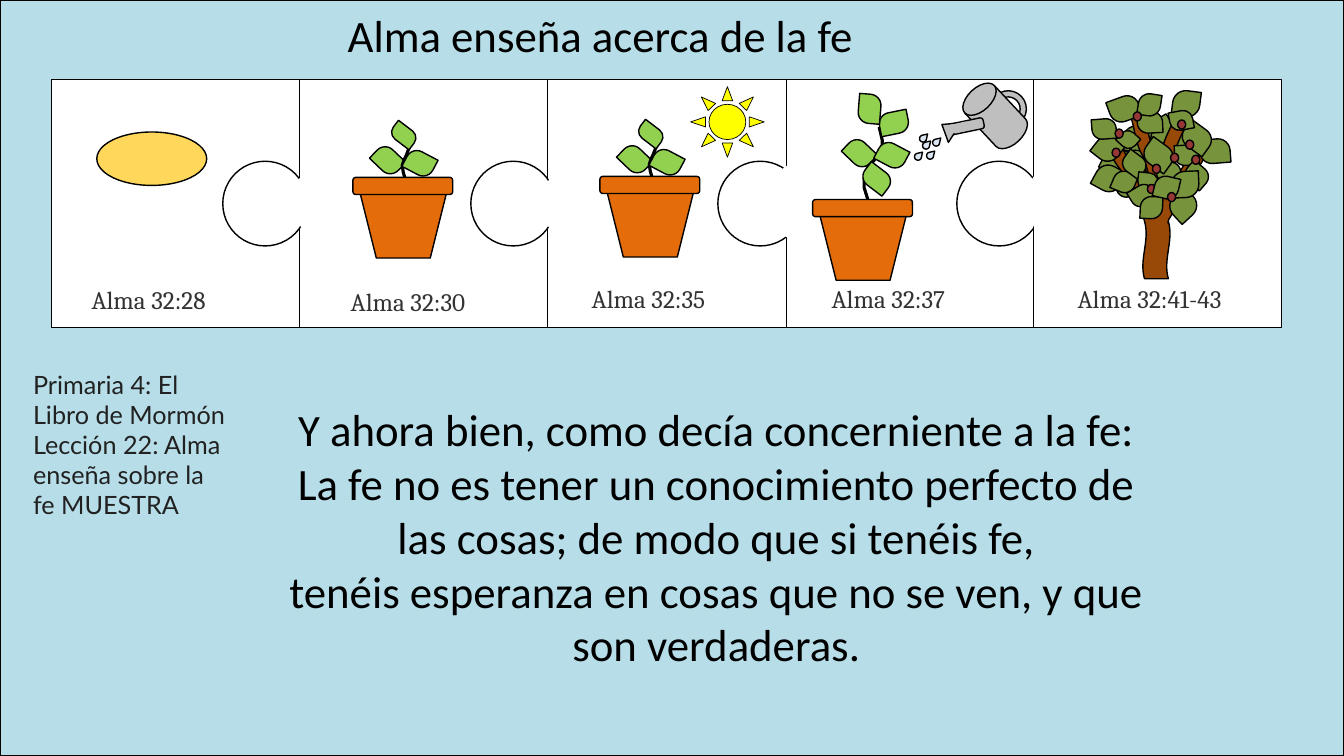
from pptx import Presentation
from pptx.dml.color import RGBColor
from pptx.enum.shapes import MSO_SHAPE
from pptx.enum.text import PP_ALIGN
from pptx.util import Inches, Pt

SKY = RGBColor(0xB7, 0xDE, 0xE8)
WHITE = RGBColor(0xFF, 0xFF, 0xFF)
BLACK = RGBColor(0, 0, 0)
SEED = RGBColor(0xFF, 0xD8, 0x5B)
LEAF = RGBColor(0x92, 0xD0, 0x50)
POT = RGBColor(0xE4, 0x6C, 0x0A)
SUN = RGBColor(0xFF, 0xFF, 0)
METAL = RGBColor(0xBF, 0xBF, 0xBF)
WATER = RGBColor(0xDC, 0xE6, 0xF2)
FOLIAGE = RGBColor(0x77, 0x93, 0x3C)
BARK = RGBColor(0x98, 0x48, 0x07)
FRUIT = RGBColor(0x95, 0x37, 0x35)
GRAY = RGBColor(0x33, 0x33, 0x33)
DARK = RGBColor(0x21, 0x21, 0x21)
NBSP = chr(160)

SIDE, KNOB, PUZZLE_TOP = 2.46, 0.84, 0.79

SPROUT_LEAVES = [(0.16, -0.31, 0.29, 0.22, 43.7), (0.48, -0.28, 0.29, 0.22, 27.8),
                 (0.38, -0.58, 0.17, 0.26, 307.3)]
SPROUT_STEM = [(0.49, 0.1), (0.5, 0.07), (0.49, 0.02), (0.46, -0.08), (0.45, -0.15),
               (0.47, -0.21), (0.49, -0.25), (0.52, -0.33), (0.52, -0.4), (0.5, -0.45)]
TALL_LEAVES = [(0.28, -0.6, 0.29, 0.22, 43.7), (0.6, -0.58, 0.29, 0.22, 27.8),
               (0.49, -0.38, 0.21, 0.29, 307.3), (0.62, -0.9, 0.29, 0.22, 348.6),
               (0.38, -1.04, 0.29, 0.22, 274.6)]
TALL_STEM = [(0.5, 0.14), (0.52, 0.08), (0.52, 0.01), (0.47, -0.15), (0.47, -0.24),
             (0.51, -0.36), (0.57, -0.42), (0.65, -0.56), (0.65, -0.62), (0.62, -0.75)]

BACK_FOLIAGE = [
    (11.58, 1.31, 0.24, 0.3, 85.5), (11.38, 1.18, 0.27, 0.26, 329.9),
    (11.14, 1.25, 0.27, 0.26, 10.4), (11.15, 1.49, 0.22, 0.22, 15.3),
    (10.94, 1.47, 0.27, 0.26, 26.4), (10.86, 1.64, 0.27, 0.26, 28.9),
    (11.09, 1.73, 0.2, 0.24, 71.7)]
BRANCHES = [
    (10.9, 2.06, 1.14, 0.27, 270), (10.72, 1.6, 0.95, 0.15, 235.5),
    (11.24, 1.76, 0.95, 0.15, 298.7), (11.11, 1.45, 0.95, 0.15, 289.4),
    (10.91, 1.43, 0.95, 0.15, 252.4)]
MIDDLE_FOLIAGE = [
    (10.86, 1.35, 0.25, 0.25, 38.2), (11.63, 0.9, 0.27, 0.26, 187.3),
    (11.03, 0.93, 0.24, 0.3, 69.8), (11.1, 1.3, 0.18, 0.17, 42.2),
    (10.85, 1.16, 0.2, 0.24, 85.5), (11.3, 1.09, 0.21, 0.25, 87.1),
    (11.04, 1.7, 0.22, 0.21, 22.8), (11.15, 1.51, 0.2, 0.24, 126.4),
    (11.49, 1.59, 0.2, 0.24, 87.1), (11.37, 1.39, 0.24, 0.3, 126),
    (11.29, 0.93, 0.22, 0.22, 8.9), (11.67, 1.42, 0.2, 0.24, 87.1),
    (11.93, 1.35, 0.24, 0.3, 85.5), (11.75, 1.22, 0.24, 0.3, 126),
    (11.62, 1.08, 0.19, 0.23, 79.4), (11.77, 1.62, 0.2, 0.24, 130.9)]
UPPER_FRUIT = [(11.03, 1.47), (11.82, 1.54), (11.76, 1.39), (11.06, 1.28),
               (11.24, 1.11), (11.68, 1.19), (11.43, 1.63), (11.61, 1.52)]
LOW_FOLIAGE = [(11.3, 1.7, 0.17, 0.2, 276.1), (11.23, 1.82, 0.2, 0.24, 238.6)]
FRONT_FOLIAGE = [
    (11.6, 1.91, 0.27, 0.26, 137.2), (11.62, 1.7, 0.27, 0.26, 177.7),
    (11.31, 1.95, 0.22, 0.22, 182.6), (11.45, 1.75, 0.24, 0.22, 193.2)]
DROPS = [(9.15, 1.41), (9.25, 1.38), (9.12, 1.34), (9.07, 1.52), (9.19, 1.51)]


def add_shape(shapes, kind, x, y, w, h, fill, rot=0, line=BLACK, width=1, adj=()):
    sp = shapes.add_shape(kind, Inches(x), Inches(y), Inches(w), Inches(h))
    sp.shadow.inherit = False
    sp.rotation = rot
    sp.fill.solid()
    sp.fill.fore_color.rgb = fill
    if line is None:
        sp.line.fill.background()
    else:
        sp.line.color.rgb = line
        sp.line.width = Pt(width)
    for i, value in enumerate(adj):
        sp.adjustments[i] = value
    return sp


def add_text(s, text, x, y, w, h, size, font, color, align=PP_ALIGN.LEFT):
    tf = s.shapes.add_textbox(Inches(x), Inches(y), Inches(w), Inches(h)).text_frame
    tf.word_wrap = True
    p = tf.paragraphs[0]
    p.text = text
    p.alignment = align
    p.font.size = Pt(size)
    p.font.name = font
    p.font.color.rgb = color


def add_leaves(shapes, leaves, color, dx=0, dy=0):
    for x, y, w, h, rot in leaves:
        add_shape(shapes, MSO_SHAPE.ROUND_2_DIAG_RECTANGLE, x + dx, y + dy, w, h,
                  color, rot, adj=(0.5, 0))


def add_stem(shapes, points, dx, dy):
    places = [(Inches(x + dx), Inches(y + dy)) for x, y in points]
    builder = shapes.build_freeform(*places[0])
    builder.add_line_segments(places[1:], close=False)
    sp = builder.convert_to_shape()
    sp.shadow.inherit = False
    sp.fill.background()
    sp.line.color.rgb = BLACK
    sp.line.width = Pt(2.25)


def add_plant(s, x, y, leaves, stem):
    shapes = s.shapes.add_group_shape().shapes
    add_leaves(shapes, leaves[:1], LEAF, x, y)
    add_stem(shapes, stem, x, y)
    add_leaves(shapes, leaves[1:2], LEAF, x, y)
    add_shape(shapes, MSO_SHAPE.TRAPEZOID, x, y, 0.92, 0.77, POT, 180)
    add_shape(shapes, MSO_SHAPE.ROUNDED_RECTANGLE, x - 0.04, y - 0.03, 0.99, 0.17, POT)
    add_leaves(shapes, leaves[2:], LEAF, x, y)


def add_puzzle(s):
    shapes = s.shapes.add_group_shape().shapes

    def piece(x):
        add_shape(shapes, MSO_SHAPE.RECTANGLE, x, PUZZLE_TOP, SIDE, SIDE, WHITE)

    def knob(x, y=1.6, line=BLACK):
        add_shape(shapes, MSO_SHAPE.OVAL, x, y, KNOB, KNOB, WHITE, line=line)

    for x in (2.97, 5.43, 0.51):
        piece(x)
    for x in (2.21, 4.67, 7.12):
        knob(x)
    piece(7.8)
    knob(9.49)
    for x, y in ((5.38, 1.6), (2.91, 1.58), (7.62, 1.58)):
        knob(x, y, WHITE)
    piece(10.25)
    knob(10.18, 1.58, WHITE)


def add_watering_can(s):
    shapes = s.shapes.add_group_shape().shapes
    add_shape(shapes, MSO_SHAPE.DONUT, 9.82, 0.9, 0.36, 0.36, METAL, 316.9, adj=(0.17,))
    add_shape(shapes, MSO_SHAPE.FLOWCHART_MAGNETIC_DISK, 9.67, 0.81, 0.4, 0.68, METAL, 316.9)
    add_shape(shapes, MSO_SHAPE.ROUNDED_RECTANGLE, 9.52, 1.07, 0.11, 0.37, METAL, 258.2,
              adj=(0.26,))
    add_shape(shapes, MSO_SHAPE.ISOSCELES_TRIANGLE, 9.29, 1.2, 0.23, 0.15, METAL, 302.6)
    add_shape(shapes, MSO_SHAPE.ROUNDED_RECTANGLE, 9.47, 1.17, 0.09, 0.19, METAL, 258.2,
              line=None, adj=(0.26,))
    for x, y in DROPS:
        add_shape(shapes, MSO_SHAPE.TEAR, x, y, 0.07, 0.07, WATER, adj=(1.29,))


def add_tree(s):
    shapes = s.shapes.add_group_shape().shapes

    def fruit(places):
        for x, y in places:
            add_shape(shapes, MSO_SHAPE.OVAL, x, y, 0.08, 0.09, FRUIT)

    add_leaves(shapes, BACK_FOLIAGE, FOLIAGE)
    for x, y, w, h, rot in BRANCHES:
        add_shape(shapes, MSO_SHAPE.DOUBLE_WAVE, x, y, w, h, BARK, rot)
    add_shape(shapes, MSO_SHAPE.OVAL, 11.39, 1.81, 0.19, 0.67, BARK, line=None)
    add_leaves(shapes, MIDDLE_FOLIAGE, FOLIAGE)
    fruit(UPPER_FRUIT)
    add_leaves(shapes, LOW_FOLIAGE, FOLIAGE)
    fruit([(11.38, 1.83)])
    add_leaves(shapes, FRONT_FOLIAGE, FOLIAGE)
    fruit([(11.58, 1.91)])


def main():
    prs = Presentation()
    prs.slide_width, prs.slide_height = Inches(13.33), Inches(7.5)
    s = prs.slides.add_slide(prs.slide_layouts[6])
    add_shape(s.shapes, MSO_SHAPE.RECTANGLE, 0, 0, 13.33, 7.5, SKY)
    add_puzzle(s)
    add_shape(s.shapes, MSO_SHAPE.OVAL, 0.96, 1.31, 1.09, 0.53, SEED)
    add_text(s, f"Y ahora bien, como decía concerniente a la{NBSP}fe: La fe no es tener un "
             "conocimiento perfecto de las cosas; de modo que si tenéis fe, "
             f"tenéis{NBSP}esperanza{NBSP}en cosas que{NBSP}no{NBSP}se ven, y que son verdaderas.",
             2.63, 3.94, 8.95, 3.33, 32, "Calibri", BLACK, PP_ALIGN.CENTER)
    for verse, x, y, w in (("28", 0.81, 2.77, 1.48), ("30", 3.38, 2.79, 1.48),
                           ("35", 5.77, 2.76, 1.48), ("37", 8.15, 2.76, 1.48),
                           ("41-43", 10.59, 2.76, 1.84)):
        add_text(s, f"Alma 32:{verse}", x, y, w, 0.4, 18, "Cambria", GRAY)
    add_plant(s, 3.54, 1.79, SPROUT_LEAVES, SPROUT_STEM)
    add_shape(s.shapes, MSO_SHAPE.SUN, 6.85, 0.86, 0.73, 0.7, SUN, width=0.5)
    add_watering_can(s)
    add_tree(s)
    add_plant(s, 8.1, 2.01, TALL_LEAVES, TALL_STEM)
    add_plant(s, 5.99, 1.78, SPROUT_LEAVES, SPROUT_STEM)
    add_text(s, "Alma enseña acerca de la fe", 3.35, 0.03, 6.46, 0.64, 32, "Calibri", BLACK)
    add_text(s, "Primaria 4: El Libro de Mormón Lección 22: Alma enseña sobre la fe MUESTRA",
             0.23, 3.61, 2.16, 1.62, 18, "Lato", DARK)
    prs.save("out.pptx")


if __name__ == "__main__":
    main()
